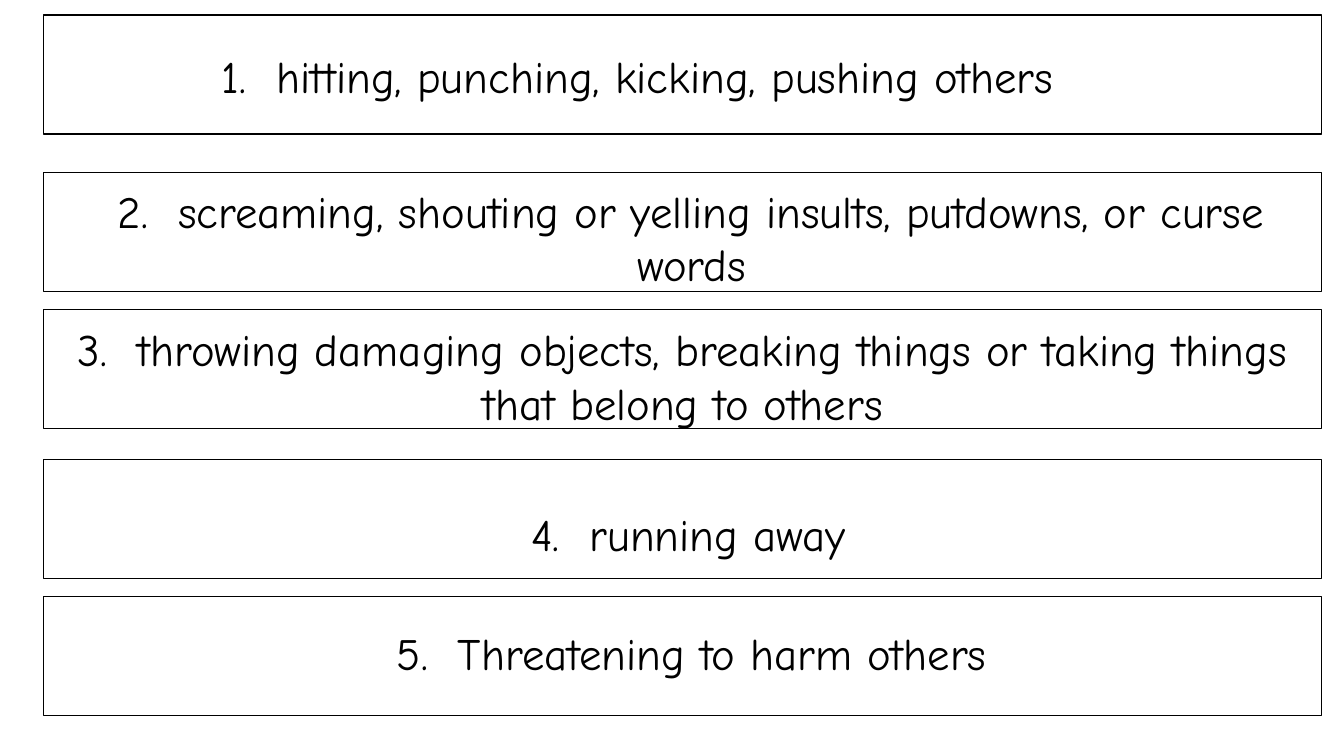
from dataclasses import dataclass

from pptx import Presentation
from pptx.dml.color import RGBColor
from pptx.enum import shapes, text
from pptx.slide import Slide
from pptx.util import Pt

COLORS = {"paper": "FFFFFF", "ink": "000000"}
FONT = "Comic Neue"
FONT_SIZE = 32
FRAME_LEFT, FRAME_WIDTH, FRAME_HEIGHT = 31, 913, 85
ONE_LINE, TWO_LINES = 46, 85


@dataclass(frozen=True)
class Behavior:
    """A framed list entry; all lengths are in points."""
    wording: str
    frame_top: float
    left: float
    top: float
    width: float
    height: float


BEHAVIORS = [
    Behavior("1.  hitting, punching, kicking, pushing others",
             10.8, 77, 31, 757.4, ONE_LINE),
    Behavior("2.  screaming, shouting or yelling insults, putdowns, or curse words",
             123.1, 43.9, 127.4, 900, TWO_LINES),
    Behavior("3.  throwing damaging objects, breaking things or taking things that belong to others",
             221, 46.8, 226.1, 882, TWO_LINES),
    Behavior("4.  running away ",
             328.3, 65.5, 358.6, 863.3, ONE_LINE),
    Behavior("5.  Threatening to harm others",
             426.2, 45.4, 443.5, 897.8, ONE_LINE),
]


def color(name: str) -> RGBColor:
    return RGBColor.from_string(COLORS[name])


def draw_frame(slide: Slide, behavior: Behavior) -> None:
    frame = slide.shapes.add_shape(
        shapes.MSO_SHAPE.RECTANGLE, Pt(FRAME_LEFT), Pt(behavior.frame_top),
        Pt(FRAME_WIDTH), Pt(FRAME_HEIGHT))
    frame.shadow.inherit = False
    frame.fill.solid()
    frame.fill.fore_color.rgb = color("paper")
    frame.line.color.rgb = color("ink")
    frame.line.width = Pt(1)


def draw_wording(slide: Slide, behavior: Behavior) -> None:
    box = slide.shapes.add_textbox(
        Pt(behavior.left), Pt(behavior.top), Pt(behavior.width), Pt(behavior.height))
    box.text_frame.word_wrap = True
    box.text_frame.auto_size = text.MSO_AUTO_SIZE.SHAPE_TO_FIT_TEXT
    paragraph = box.text_frame.paragraphs[0]
    paragraph.alignment = text.PP_ALIGN.CENTER
    run = paragraph.add_run()
    run.text = behavior.wording
    run.font.name = FONT
    run.font.size = Pt(FONT_SIZE)
    run.font.color.rgb = color("ink")


def main() -> None:
    presentation = Presentation()
    presentation.slide_width = Pt(960)
    presentation.slide_height = Pt(540)
    blank_layout = presentation.slide_layouts.get_by_name("Blank")
    slide = presentation.slides.add_slide(blank_layout)
    for behavior in BEHAVIORS:
        draw_frame(slide, behavior)
        draw_wording(slide, behavior)
    presentation.save("out.pptx")


if __name__ == "__main__":
    main()
